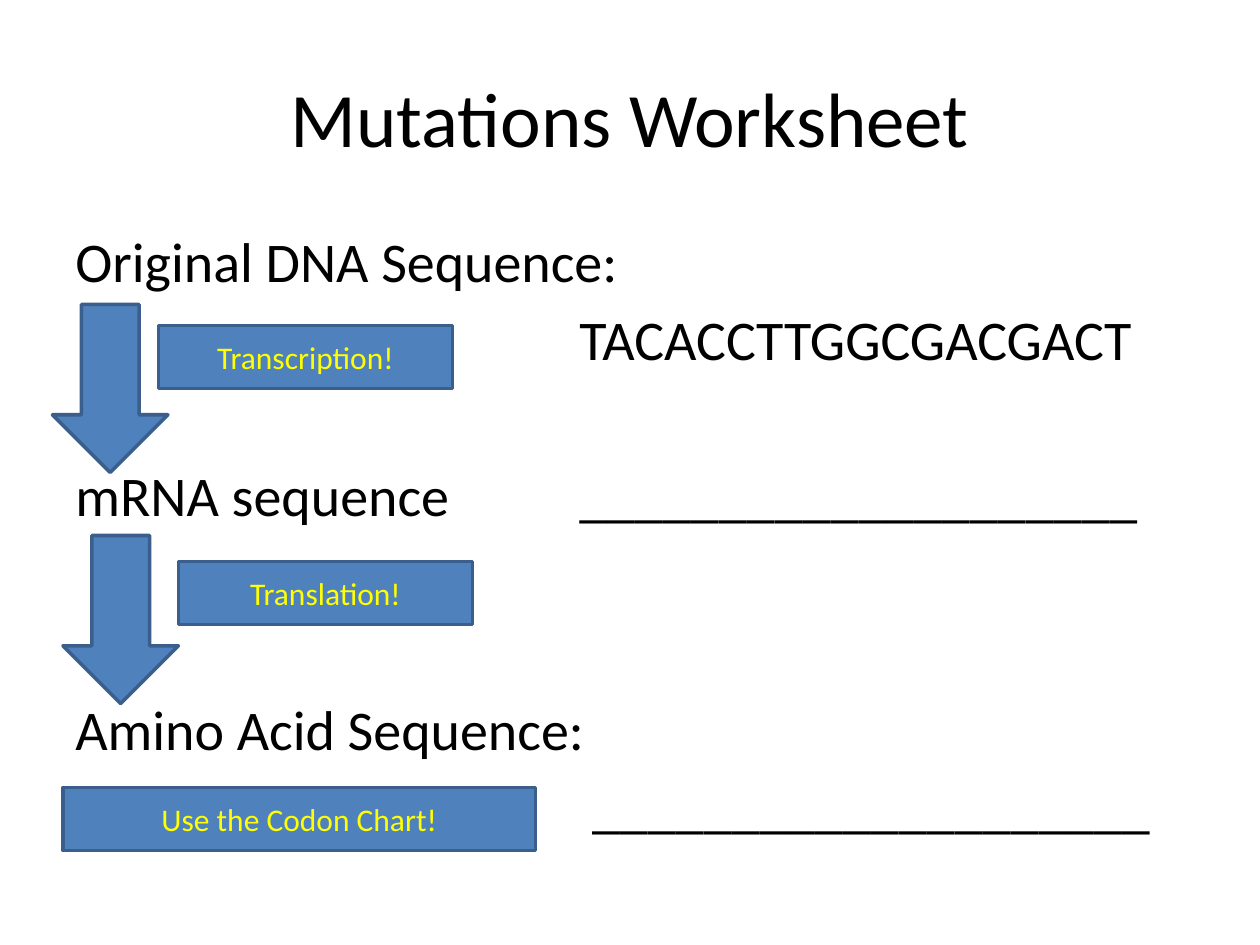
from dataclasses import dataclass

from lxml import etree
from pptx import Presentation
from pptx import util as u
from pptx.dml import color
from pptx.enum import shapes, text
from pptx.oxml import ns


@dataclass(frozen=True)
class Theme:
    font: str = "Calibri"
    ink: str = "000000"
    fill: str = "4F81BD"
    outline: str = "3A5F8C"
    label: str = "FFFF00"
    title_size: int = 44
    body_size: int = 32
    label_size: int = 18
    line_width: int = 2


def rgb(value):
    return color.RGBColor.from_string(value)


def write_text(paragraph, wording, *, font, size, ink, align=text.PP_ALIGN.LEFT,
               before=0, tab=None):
    paragraph.alignment = align
    paragraph.space_before = u.Pt(before)
    run = paragraph.add_run()
    run.text = wording
    run.font.name = font
    run.font.size = u.Pt(size)
    run.font.color.rgb = rgb(ink)
    if tab:
        properties = paragraph._p.get_or_add_pPr()
        tab_list = etree.SubElement(properties, ns.qn("a:tabLst"))
        etree.SubElement(tab_list, ns.qn("a:tab"), pos=str(u.Pt(tab)), algn="l")


class Worksheet:
    def __init__(self, slide, theme):
        self.slide = slide
        self.theme = theme

    def text_box(self, left, top, width, height, anchor):
        box = self.slide.shapes.add_textbox(*map(u.Pt, (left, top, width, height)))
        frame = box.text_frame
        frame.word_wrap = True
        frame.vertical_anchor = anchor
        return frame

    def title(self, wording, *area):
        frame = self.text_box(*area, text.MSO_ANCHOR.MIDDLE)
        write_text(frame.paragraphs[0], wording, font=self.theme.font,
                   size=self.theme.title_size, ink=self.theme.ink,
                   align=text.PP_ALIGN.CENTER)

    def body(self, lines, tab, *area):
        frame = self.text_box(*area, text.MSO_ANCHOR.TOP)
        for index, (wording, before) in enumerate(lines):
            paragraph = frame.add_paragraph() if index else frame.paragraphs[0]
            write_text(paragraph, wording, font=self.theme.font,
                       size=self.theme.body_size, ink=self.theme.ink,
                       before=before, tab=tab)

    def block(self, kind, left, top, width, height):
        shape = self.slide.shapes.add_shape(kind, *map(u.Pt, (left, top, width, height)))
        shape.shadow.inherit = False
        shape.fill.solid()
        shape.fill.fore_color.rgb = rgb(self.theme.fill)
        shape.line.color.rgb = rgb(self.theme.outline)
        shape.line.width = u.Pt(self.theme.line_width)
        return shape

    def arrow(self, left, top):
        self.block(shapes.MSO_SHAPE.DOWN_ARROW, left, top, 66, 96)

    def label(self, wording, left, top, width=168):
        frame = self.block(shapes.MSO_SHAPE.RECTANGLE, left, top, width, 36).text_frame
        frame.word_wrap = True
        frame.vertical_anchor = text.MSO_ANCHOR.MIDDLE
        write_text(frame.paragraphs[0], wording, font=self.theme.font,
                   size=self.theme.label_size, ink=self.theme.label,
                   align=text.PP_ALIGN.CENTER)


def main():
    presentation = Presentation()
    presentation.slide_width = u.Pt(720)
    presentation.slide_height = u.Pt(540)
    slide = presentation.slides.add_slide(presentation.slide_layouts[6])
    worksheet = Worksheet(slide, Theme())

    gap = 5.8
    line_step = 44.9
    answer = "_" * 20
    worksheet.title("Mutations Worksheet", 36, 21.6, 648, 90)
    worksheet.body([
        ("Original DNA Sequence:", 0),
        ("\tTACACCTTGGCGACGACT", gap),
        ("mRNA sequence\t" + answer, gap + line_step),
        ("Amino Acid Sequence:", gap + 2 * line_step),
        ("\t " + answer, gap),
    ], 288, 36, 126, 648, 402)

    worksheet.arrow(30, 174)
    worksheet.label("Transcription!", 90.5, 186)
    worksheet.arrow(36, 306)
    worksheet.label("Translation!", 102, 321)
    worksheet.label("Use the Codon Chart!", 36, 450, width=270)
    presentation.save("out.pptx")


if __name__ == "__main__":
    main()
